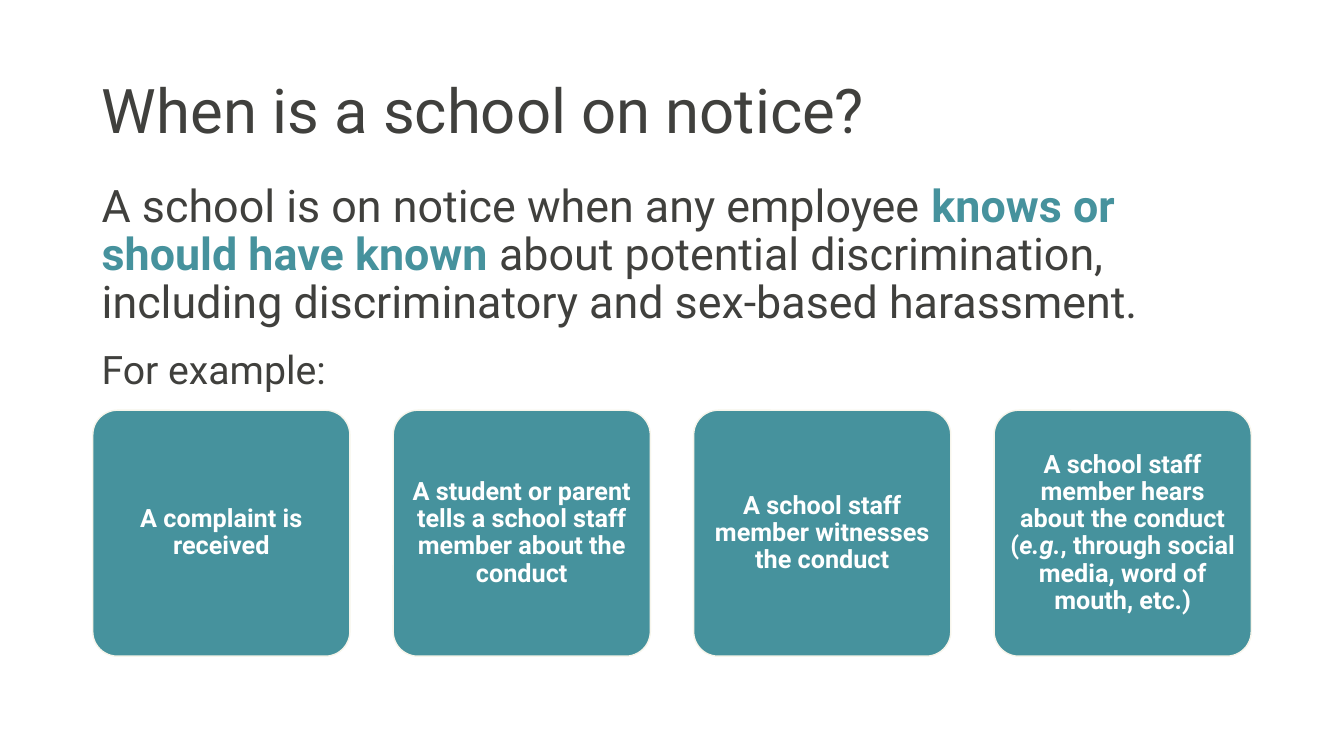
from dataclasses import dataclass

from pptx import Presentation
from pptx.dml.color import RGBColor
from pptx.enum.shapes import MSO_SHAPE
from pptx.enum.text import MSO_ANCHOR, MSO_AUTO_SIZE, PP_ALIGN
from pptx.slide import Slide
from pptx.text.text import TextFrame
from pptx.util import Inches, Pt


@dataclass(frozen=True)
class Theme:
    font: str = "Roboto"
    ink: RGBColor = RGBColor(0x40, 0x40, 0x3D)
    teal: RGBColor = RGBColor(0x46, 0x92, 0x9D)
    cream: RGBColor = RGBColor(0xF7, 0xF5, 0xEB)
    white: RGBColor = RGBColor(0xFF, 0xFF, 0xFF)
    title: int = 44
    body: int = 32
    lead: int = 28
    card: int = 18


@dataclass(frozen=True)
class Span:
    text: str
    color: RGBColor | None = None
    bold: bool | None = None
    italic: bool | None = None


@dataclass(frozen=True)
class Box:
    left: float
    top: float
    width: float
    height: float

    def place(self) -> tuple[Inches, Inches, Inches, Inches]:
        return (Inches(self.left), Inches(self.top),
                Inches(self.width), Inches(self.height))


@dataclass(frozen=True)
class Card:
    spans: tuple[Span, ...]


THEME = Theme()
TITLE = Box(0.91, 0.62, 8.01, 1.01)
BODY = Box(0.91, 1.77, 11.5, 1.71)
LEAD = Box(0.91, 3.38, 10.25, 0.57)
FIRST = Box(0.92, 4.07, 2.55, 2.44)
STEP = 2.98
INSET = 0.07

RULE = (
    Span("A school is on notice when any employee "),
    Span("knows or should have known", THEME.teal, True),
    Span(" about potential discrimination, including discriminatory "
         "and sex-based harassment."),
)
CARDS = (
    Card((Span("A complaint is received"),)),
    Card((Span("A student or parent tells a school staff member "
               "about the conduct"),)),
    Card((Span("A school staff member witnesses the conduct"),)),
    Card((Span("A school staff member hears about the conduct ("),
          Span("e.g.", italic=True),
          Span(", through social media, word of mouth, etc.)"))),
)


def write(frame: TextFrame, spans: tuple[Span, ...], size: int,
          color: RGBColor = THEME.ink, bold: bool = False,
          align: PP_ALIGN = PP_ALIGN.LEFT,
          anchor: MSO_ANCHOR = MSO_ANCHOR.TOP, space: float = 0.9) -> None:
    frame.word_wrap = True
    frame.auto_size = MSO_AUTO_SIZE.NONE
    frame.vertical_anchor = anchor
    line = frame.paragraphs[0]
    line.alignment = align
    line.line_spacing = space
    line.font.name = THEME.font
    line.font.size = Pt(size)
    line.font.bold = bold
    line.font.color.rgb = color
    for span in spans:
        run = line.add_run()
        run.text = span.text
        run.font.bold = span.bold
        run.font.italic = span.italic
        run.font.color.rgb = span.color or color


def add_title(slide: Slide) -> None:
    title = slide.shapes.title
    title.left, title.top, title.width, title.height = TITLE.place()
    write(title.text_frame, (Span("When is a school on notice?"),),
          THEME.title, anchor=MSO_ANCHOR.MIDDLE)


def add_text(slide: Slide, box: Box, spans: tuple[Span, ...],
             size: int, space: float) -> None:
    frame = slide.shapes.add_textbox(*box.place()).text_frame
    write(frame, spans, size, space=space)


def add_card(slide: Slide, card: Card, index: int) -> None:
    box = Box(FIRST.left + index * STEP, FIRST.top, FIRST.width, FIRST.height)
    shape = slide.shapes.add_shape(MSO_SHAPE.ROUNDED_RECTANGLE, *box.place())
    shape.adjustments[0] = 0.1
    shape.shadow.inherit = False
    shape.fill.solid()
    shape.fill.fore_color.rgb = THEME.teal
    shape.line.color.rgb = THEME.cream
    shape.line.width = Pt(1)
    frame = shape.text_frame
    frame.margin_left = frame.margin_right = Inches(INSET)
    frame.margin_top = frame.margin_bottom = Inches(INSET)
    write(frame, card.spans, THEME.card, THEME.white, True,
          PP_ALIGN.CENTER, MSO_ANCHOR.MIDDLE)


def main() -> None:
    deck = Presentation()
    deck.slide_width = Inches(13.33)
    deck.slide_height = Inches(7.5)
    slide = deck.slides.add_slide(deck.slide_layouts[5])
    add_title(slide)
    add_text(slide, BODY, RULE, THEME.body, 0.9)
    add_text(slide, LEAD, (Span("For example:"),), THEME.lead, 1.0)
    for index, card in enumerate(CARDS):
        add_card(slide, card, index)
    deck.save("out.pptx")


if __name__ == "__main__":
    main()
